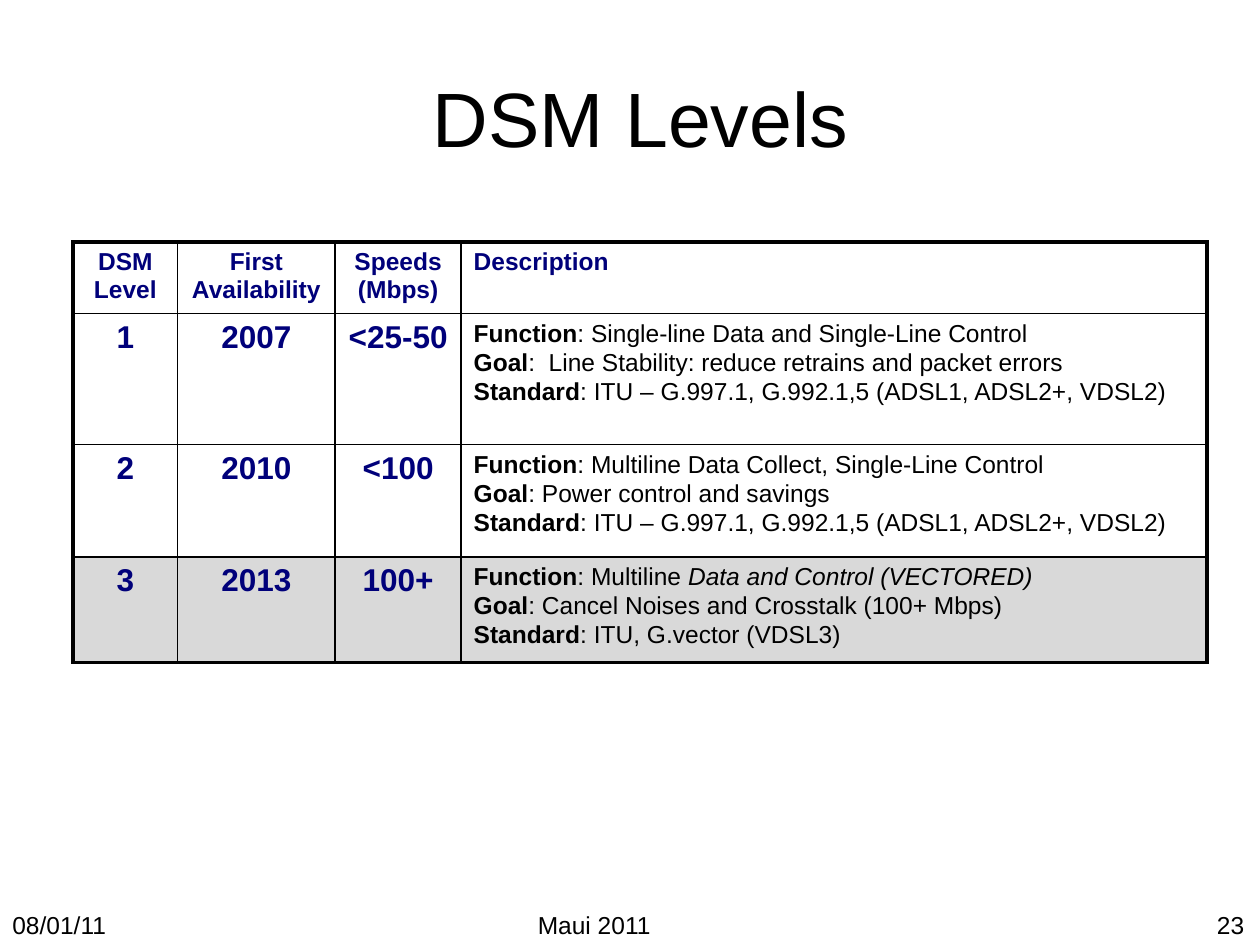
from lxml import etree
from pptx import Presentation
from pptx.dml.color import RGBColor
from pptx.enum.text import MSO_ANCHOR, PP_ALIGN
from pptx.oxml.ns import qn
from pptx.util import Inches, Pt

CENTER, LEFT = PP_ALIGN.CENTER, PP_ALIGN.LEFT
MIDDLE = MSO_ANCHOR.MIDDLE
BLACK = RGBColor(0x00, 0x00, 0x00)
NAVY = RGBColor(0x00, 0x00, 0x7A)
GRAY = RGBColor(0xD9, 0xD9, 0xD9)
FONT = "Arial"
THIN, THICK = Pt(1), Pt(2.25)

COLUMN_WIDTHS = [0.83, 1.25, 1, 5.92]
ROW_HEIGHTS = [0.57, 1.04, 0.89, 0.84]
HEADERS = ["DSM Level", "First Availability", "Speeds (Mbps)", "Description"]
# Each description line is a label, its plain text and an optional italic ending.
LEVELS = [
    ("1", "2007", "<25-50", [
        ("Function", ": Single-line Data and Single-Line Control"),
        ("Goal", ":  Line Stability: reduce retrains and packet errors"),
        ("Standard", ": ITU – G.997.1, G.992.1,5 (ADSL1, ADSL2+, VDSL2)"),
    ]),
    ("2", "2010", "<100", [
        ("Function", ": Multiline Data Collect, Single-Line Control"),
        ("Goal", ": Power control and savings"),
        ("Standard", ": ITU – G.997.1, G.992.1,5 (ADSL1, ADSL2+, VDSL2)"),
    ]),
    ("3", "2013", "100+", [
        ("Function", ": Multiline ", "Data and Control (VECTORED)"),
        ("Goal", ": Cancel Noises and Crosstalk (100+ Mbps)"),
        ("Standard", ": ITU, G.vector (VDSL3)"),
    ]),
]
FOOTERS = [
    ("08/01/11", 0, 0.96, True),
    ("Maui 2011", 4.17, 1.1, False),
    ("23", 9.56, 0.55, False),
]


def format_font(font, size, color=BLACK, bold=False, italic=False):
    font.name = FONT
    font.size = Pt(size)
    font.color.rgb = color
    font.bold = bold
    font.italic = italic


def add_title(slide, text):
    title = slide.shapes.title
    title.left, title.top = Inches(0.67), Inches(0.3)
    title.width, title.height = Inches(8.83), Inches(1.25)
    title.text_frame.text = text
    title.text_frame.vertical_anchor = MIDDLE
    paragraph = title.text_frame.paragraphs[0]
    paragraph.alignment = CENTER
    format_font(paragraph.runs[0].font, 44)


def add_footer(slide, text, left, width, wrap):
    box = slide.shapes.add_textbox(Inches(left), Inches(7.17), Inches(width), Inches(0.33))
    box.text_frame.word_wrap = wrap
    box.text_frame.text = text
    format_font(box.text_frame.paragraphs[0].runs[0].font, 14)


def set_borders(cell, widths):
    """Draw black borders, with widths in the order left, right, top, bottom."""
    properties = cell._tc.get_or_add_tcPr()
    for side, width in zip("LRTB", widths):
        line = etree.SubElement(properties, qn(f"a:ln{side}"), w=str(width))
        fill = etree.SubElement(line, qn("a:solidFill"))
        etree.SubElement(fill, qn("a:srgbClr"), val=str(BLACK))


def fill_label(cell, text, size, alignment):
    cell.text_frame.text = text
    paragraph = cell.text_frame.paragraphs[0]
    paragraph.alignment = alignment
    format_font(paragraph.runs[0].font, size, NAVY, bold=True)


def fill_description(cell, lines):
    text_frame = cell.text_frame
    for index, parts in enumerate(lines):
        paragraph = text_frame.add_paragraph() if index else text_frame.paragraphs[0]
        if index:
            paragraph.space_before = Pt(1)
        for position, part in enumerate(parts):
            run = paragraph.add_run()
            run.text = part
            format_font(run.font, 14, bold=position == 0, italic=position == 2)


def style_cells(table):
    """Frame the table with thick borders and shade its last row."""
    last_row, last_column = len(ROW_HEIGHTS) - 1, len(COLUMN_WIDTHS) - 1
    for row in range(last_row + 1):
        for column in range(last_column + 1):
            cell = table.cell(row, column)
            outer = (column == 0, column == last_column, row == 0, row == last_row)
            set_borders(cell, [THICK if edge else THIN for edge in outer])
            if row == last_row:
                cell.fill.solid()
                cell.fill.fore_color.rgb = GRAY
            else:
                cell.fill.background()


def add_levels_table(slide):
    frame = slide.shapes.add_table(
        len(ROW_HEIGHTS), len(COLUMN_WIDTHS), Inches(0.58), Inches(1.92),
        Inches(sum(COLUMN_WIDTHS)), Inches(sum(ROW_HEIGHTS)))
    table = frame.table
    table.first_row = table.horz_banding = False
    for column, width in zip(table.columns, COLUMN_WIDTHS):
        column.width = Inches(width)
    for row, height in zip(table.rows, ROW_HEIGHTS):
        row.height = Inches(height)
    style_cells(table)
    for column, header in enumerate(HEADERS):
        alignment = LEFT if header == "Description" else CENTER
        fill_label(table.cell(0, column), header, 14, alignment)
    for row, (*labels, description) in enumerate(LEVELS, start=1):
        for column, label in enumerate(labels):
            fill_label(table.cell(row, column), label, 18, CENTER)
        fill_description(table.cell(row, len(labels)), description)


def main():
    presentation = Presentation()
    presentation.slide_width, presentation.slide_height = Inches(10), Inches(7.5)
    slide = presentation.slides.add_slide(presentation.slide_layouts[5])
    for footer in FOOTERS:
        add_footer(slide, *footer)
    add_levels_table(slide)
    add_title(slide, "DSM Levels")
    presentation.save("out.pptx")


if __name__ == "__main__":
    main()
